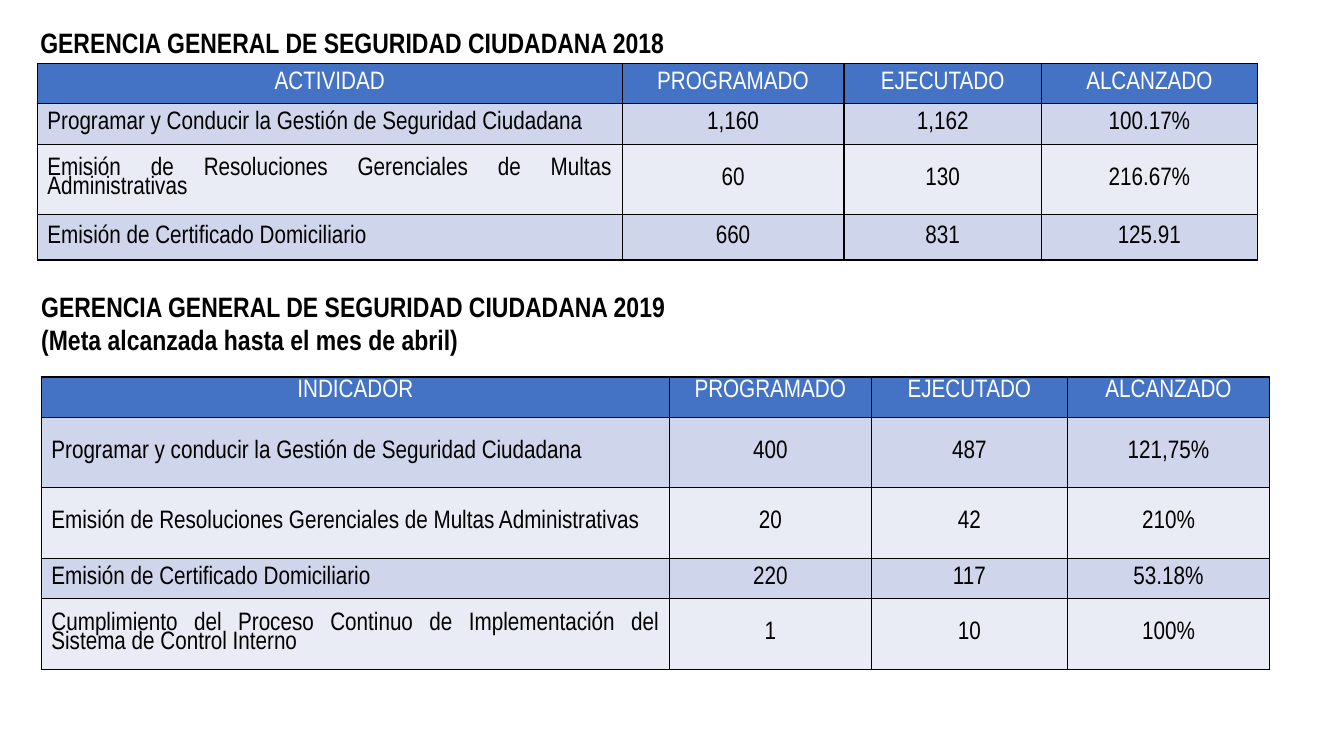
from lxml import etree
from pptx import Presentation
from pptx.dml.color import RGBColor
from pptx.enum.text import MSO_ANCHOR, PP_ALIGN
from pptx.oxml.ns import qn
from pptx.util import Inches, Pt

CENTER, LEFT, JUSTIFY = PP_ALIGN.CENTER, PP_ALIGN.LEFT, PP_ALIGN.JUSTIFY
TOP, MIDDLE = MSO_ANCHOR.TOP, MSO_ANCHOR.MIDDLE

FONT = "Arial Narrow"
BLACK, WHITE = "000000", "FFFFFF"
HEADER_FILL = "4472C4"
BAND_FILLS = ("CFD5EA", "E9EBF5")

RESULTS_2018 = [
    ("ACTIVIDAD", "PROGRAMADO", "EJECUTADO", "ALCANZADO"),
    ("Programar y Conducir la Gestión de Seguridad Ciudadana", "1,160", "1,162", "100.17%"),
    ("Emisión de Resoluciones Gerenciales de Multas Administrativas", "60", "130", "216.67%"),
    ("Emisión de Certificado Domiciliario", "660", "831", "125.91"),
]
RESULTS_2019 = [
    ("INDICADOR", "PROGRAMADO", "EJECUTADO", "ALCANZADO"),
    ("Programar y conducir la Gestión de Seguridad Ciudadana", "400", "487", "121,75%"),
    ("Emisión de Resoluciones Gerenciales de Multas Administrativas", "20", "42", "210%"),
    ("Emisión de Certificado Domiciliario", "220", "117", "53.18%"),
    ("Cumplimiento del Proceso Continuo de Implementación del Sistema de Control Interno",
     "1", "10", "100%"),
]


def rgb(color):
    return RGBColor.from_string(color)


def style_paragraph(paragraph, size, color, align, bold=False):
    paragraph.alignment = align
    font = paragraph.font
    font.name, font.size, font.bold = FONT, Pt(size), bold
    font.color.rgb = rgb(color)


def add_heading(slide, left, top, width, height, lines, align):
    frame = slide.shapes.add_textbox(
        Inches(left), Inches(top), Inches(width), Inches(height)).text_frame
    frame.word_wrap = True
    frame.text = "\n".join(lines)
    for paragraph in frame.paragraphs:
        style_paragraph(paragraph, 20, BLACK, align, bold=True)


def add_borders(cell):
    properties = cell._tc.get_or_add_tcPr()
    for side in ("a:lnL", "a:lnR", "a:lnT", "a:lnB"):
        line = etree.SubElement(properties, qn(side), w=str(Pt(1)))
        fill = etree.SubElement(line, qn("a:solidFill"))
        etree.SubElement(fill, qn("a:srgbClr"), val=BLACK)


def fill_cell(cell, text, fill, color, align, anchor):
    add_borders(cell)
    cell.fill.solid()
    cell.fill.fore_color.rgb = rgb(fill)
    cell.vertical_anchor = anchor
    cell.text = text
    paragraph = cell.text_frame.paragraphs[0]
    style_paragraph(paragraph, 18, color, align)
    paragraph.line_spacing = 0.8


def add_results(slide, left, top, columns, rows, results, header_anchor):
    table = slide.shapes.add_table(
        len(rows), len(columns), Inches(left), Inches(top),
        Inches(sum(columns)), Inches(sum(rows))).table
    for column, width in zip(table.columns, columns):
        column.width = Inches(width)
    for row, height in zip(table.rows, rows):
        row.height = Inches(height)

    # Blue header, then alternating bands with a justified first column
    for r, values in enumerate(results):
        for c, value in enumerate(values):
            cell = table.cell(r, c)
            if r == 0:
                fill_cell(cell, value, HEADER_FILL, WHITE, CENTER, header_anchor)
            else:
                align = JUSTIFY if c == 0 else CENTER
                fill_cell(cell, value, BAND_FILLS[(r - 1) % 2], BLACK, align, MIDDLE)


def main():
    deck = Presentation()
    deck.slide_width, deck.slide_height = Inches(13.33), Inches(7.5)
    slide = deck.slides.add_slide(deck.slide_layouts[6])

    # Full year 2018
    add_heading(slide, 0.22, 0.2, 6.55, 0.44,
                ["GERENCIA GENERAL DE SEGURIDAD CIUDADANA 2018"], CENTER)
    add_results(slide, 0.37, 0.63, (5.8, 2.2, 1.96, 2.14),
                (0.4, 0.4, 0.7, 0.45), RESULTS_2018, MIDDLE)

    # 2019 up to April
    add_heading(slide, 0.31, 2.82, 6.71, 0.77,
                ["GERENCIA GENERAL DE SEGURIDAD CIUDADANA 2019",
                 "(Meta alcanzada hasta el mes de abril)"], LEFT)
    add_results(slide, 0.41, 3.74, (6.23, 2, 1.95, 2),
                (0.4, 0.7, 0.7, 0.4, 0.7), RESULTS_2019, TOP)

    deck.save("out.pptx")


if __name__ == "__main__":
    main()
